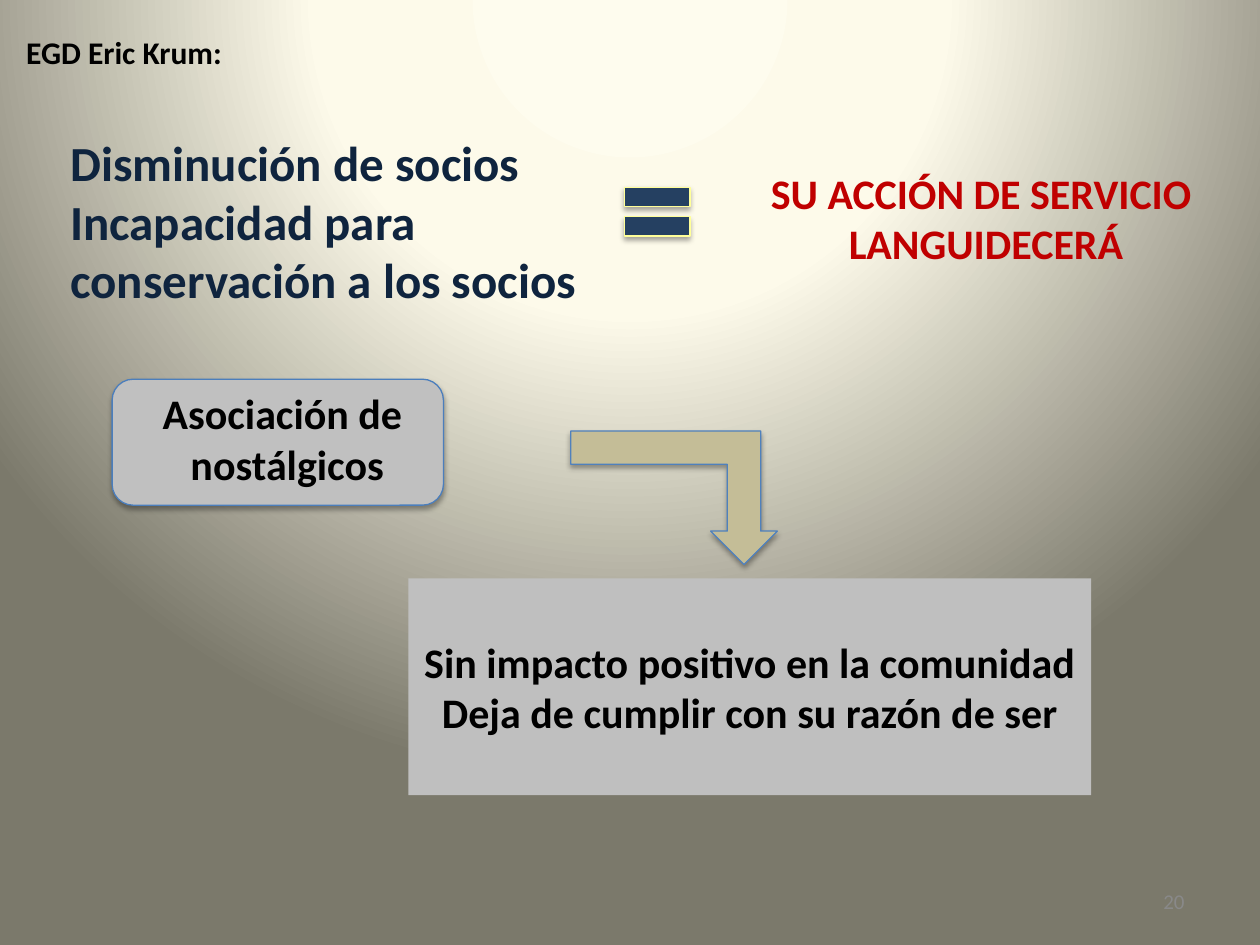
"""Builds the slide on membership decline and its effect on service."""
import pptx
import pptx.dml.color
import pptx.enum.shapes
import pptx.enum.text
import pptx.oxml
import pptx.oxml.ns
import pptx.util
from pptx.util import Inches

SHAPE = pptx.enum.shapes.MSO_SHAPE
ALIGN = pptx.enum.text.PP_ALIGN
ANCHOR = pptx.enum.text.MSO_ANCHOR
qn = pptx.oxml.ns.qn
NS = pptx.oxml.ns.nsdecls("a")


def rgb(color):
    """Return the colour for a hex string."""
    return pptx.dml.color.RGBColor.from_string(color)


def set_background(s, stops, focus):
    """Give the slide a circular gradient from (percent, colour) stops."""
    s.background.fill.gradient()
    old = s.element.find(".//" + qn("a:gradFill"))
    stop_xml = "".join(
        f'<a:gs pos="{pos * 1000}"><a:srgbClr val="{color}"/></a:gs>'
        for pos, color in stops)
    rect = " ".join(f'{side}="{value * 1000}"' for side, value in zip("ltrb", focus))
    new = pptx.oxml.parse_xml(
        f'<a:gradFill {NS} rotWithShape="1"><a:gsLst>{stop_xml}</a:gsLst>'
        f'<a:path path="circle"><a:fillToRect {rect}/></a:path></a:gradFill>')
    old.getparent().replace(old, new)


def add_shadow(sp):
    """Add a soft shadow straight below a shape."""
    effects = sp.element.spPr.find(qn("a:effectLst"))
    effects.append(pptx.oxml.parse_xml(
        f'<a:outerShdw {NS} blurRad="{pptx.util.Pt(3.1)}" dist="{pptx.util.Pt(1.8)}" '
        'dir="5400000" rotWithShape="0"><a:srgbClr val="000000">'
        '<a:alpha val="35000"/></a:srgbClr></a:outerShdw>'))


def add_shape(shapes, kind, box, fill, line=None):
    """Add a filled shape; an outlined one also casts a shadow."""
    sp = shapes.add_shape(kind, *map(Inches, box))
    sp.shadow.inherit = False
    sp.fill.solid()
    sp.fill.fore_color.rgb = rgb(fill)
    if line:
        sp.line.color.rgb = rgb(line)
        sp.line.width = pptx.util.Pt(0.75)
        add_shadow(sp)
    else:
        sp.line.fill.background()
    return sp


def write(sp, lines, size, color, align=ALIGN.CENTER, wrap=False, bold=True,
          anchor=ANCHOR.TOP):
    """Write one paragraph per line into a shape."""
    tf = sp.text_frame
    tf.word_wrap = wrap
    tf.vertical_anchor = anchor
    for i, line in enumerate(lines):
        p = tf.add_paragraph() if i else tf.paragraphs[0]
        p.alignment = align
        r = p.add_run()
        r.text = line
        r.font.name = "Calibri"
        r.font.size = pptx.util.Pt(size)
        r.font.bold = bold
        r.font.color.rgb = rgb(color)


def add_text(s, box, lines, size, color, **style):
    """Add a text box."""
    write(s.shapes.add_textbox(*map(Inches, box)), lines, size, color, **style)


def main():
    """Build and save the slide."""
    prs = pptx.Presentation()
    prs.slide_width, prs.slide_height = Inches(10), Inches(7.5)
    s = prs.slides.add_slide(prs.slide_layouts[6])
    set_background(s, [(0, "FEFCEE"), (40, "FDFAEA"), (100, "7B796B")],
                   (50, -80, 50, 180))

    impact = add_shape(s.shapes, SHAPE.RECTANGLE, (3.24, 4.59, 5.42, 1.72), "BFBFBF")
    write(impact, ["Sin impacto positivo en la comunidad",
                   "Deja de cumplir con su razón de ser"], 24, "000000",
          anchor=ANCHOR.MIDDLE)

    group = s.shapes.add_group_shape()
    add_shape(group.shapes, SHAPE.ROUNDED_RECTANGLE, (0.89, 3.01, 2.63, 1),
              "C0C0C0", "4B7EBC")
    label = add_shape(group.shapes, SHAPE.RECTANGLE, (1.18, 3.03, 2.2, 0.91), "C0C0C0")
    write(label, ["Asociación de ", "nostálgicos"], 24, "000000")

    add_text(s, (0.46, 1, 4.31, 1.51),
             ["Disminución de socios", "Incapacidad para conservación a los socios"],
             28, "0F243E", align=ALIGN.LEFT, wrap=True)
    add_text(s, (6, 1.28, 3.65, 0.91), ["SU ACCIÓN DE SERVICIO ", "LANGUIDECERÁ"],
             24, "C00000")

    add_shape(s.shapes, SHAPE.MATH_EQUAL, (4.86, 1.35, 0.71, 0.66), "254061", "FFFF99")
    arrow = add_shape(s.shapes, SHAPE.BENT_UP_ARROW, (4.53, 3.42, 1.64, 1.06),
                      "C4BD97", "4F81BD")
    arrow.rotation = 180
    arrow.element.spPr.find(qn("a:xfrm")).set("flipH", "1")

    add_text(s, (0.1, 0.21, 1.77, 0.4), ["EGD Eric Krum:"], 18, "000000")
    add_text(s, (7.17, 6.95, 2.33, 0.4), ["20"], 12, "898989", align=ALIGN.RIGHT,
             wrap=True, bold=False, anchor=ANCHOR.MIDDLE)
    prs.save("out.pptx")


if __name__ == "__main__":
    main()
